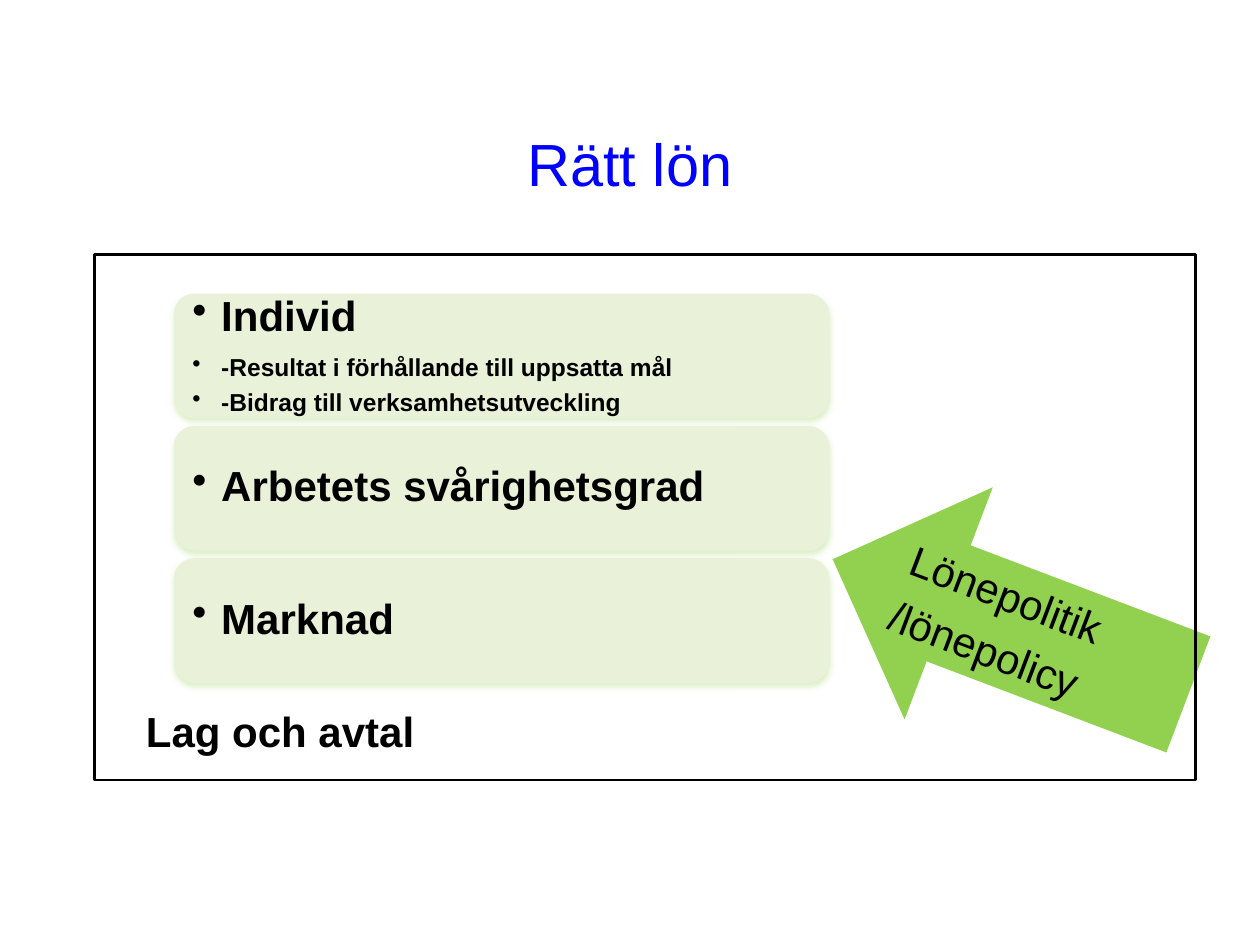
from dataclasses import dataclass

from lxml import etree
from pptx import Presentation
from pptx.dml.color import RGBColor
from pptx.enum.shapes import MSO_SHAPE
from pptx.enum.text import MSO_ANCHOR, MSO_AUTO_SIZE, PP_ALIGN
from pptx.oxml import parse_xml
from pptx.oxml.ns import nsdecls, qn
from pptx.util import Inches, Pt

ROUNDED, RECTANGLE, LEFT_ARROW = (
    MSO_SHAPE.ROUNDED_RECTANGLE, MSO_SHAPE.RECTANGLE, MSO_SHAPE.LEFT_ARROW)
MIDDLE, LEFT, CENTER = MSO_ANCHOR.MIDDLE, PP_ALIGN.LEFT, PP_ALIGN.CENTER
FIT_SHAPE, NO_FIT = MSO_AUTO_SIZE.SHAPE_TO_FIT_TEXT, MSO_AUTO_SIZE.NONE
TITLE_ONLY = 5


@dataclass(frozen=True)
class Theme:
    font: str = "Arial"
    title_size: int = 34
    heading_size: int = 24
    detail_size: int = 14
    title: str = "0000FF"
    text: str = "000000"
    card: str = "E9F1D8"
    glow: str = "9ED561"
    arrow: str = "92D050"
    grid: float = 0.25  # inches per column and row
    indent: float = 0.23


class SlideBuilder:
    def __init__(self, slide, theme):
        self.slide = slide
        self.theme = theme

    def place(self, *cells):
        return [Inches(cell * self.theme.grid) for cell in cells]

    def style(self, paragraph, size, color, bold=False, align=LEFT):
        paragraph.alignment = align
        font = paragraph.font
        font.name, font.size, font.bold = self.theme.font, Pt(size), bold
        font.color.rgb = RGBColor.from_string(color)

    def fill_lines(self, frame, lines):
        """Set one paragraph per line and return the paragraphs."""
        frame.text = "\n".join(lines)
        return frame.paragraphs

    def title(self, text, *cells):
        shape = self.slide.shapes.title
        shape.left, shape.top, shape.width, shape.height = self.place(*cells)
        frame = shape.text_frame
        frame.text, frame.vertical_anchor = text, MIDDLE
        frame.auto_size = NO_FIT
        self.style(frame.paragraphs[0], self.theme.title_size,
                   self.theme.title, align=CENTER)

    def shape(self, kind, *cells, fill=None, line=None):
        shape = self.slide.shapes.add_shape(kind, *self.place(*cells))
        shape.shadow.inherit = False
        if fill:
            shape.fill.solid()
            shape.fill.fore_color.rgb = RGBColor.from_string(fill)
        else:
            shape.fill.background()
        if line:
            shape.line.color.rgb = RGBColor.from_string(line)
            shape.line.width = Pt(1.5)
        else:
            shape.line.fill.background()
        return shape

    def add_shadow(self, shape):
        effects = shape._element.spPr.find(qn("a:effectLst"))
        effects.append(parse_xml(
            f'<a:outerShdw {nsdecls("a")} blurRad="{Pt(3.1)}" dist="{Pt(1.8)}" '
            f'dir="5400000" rotWithShape="0"><a:srgbClr val="{self.theme.glow}">'
            '<a:alpha val="35000"/></a:srgbClr></a:outerShdw>'))

    def add_bullet(self, paragraph):
        properties = paragraph._p.get_or_add_pPr()
        indent = Inches(self.theme.indent)
        properties.set("marL", str(indent))
        properties.set("indent", str(-indent))
        etree.SubElement(properties, qn("a:buChar")).set("char", "•")

    def card(self, lines, *cells):
        theme = self.theme
        shape = self.shape(ROUNDED, *cells, fill=theme.card)
        self.add_shadow(shape)
        frame = shape.text_frame
        frame.word_wrap, frame.vertical_anchor = True, MIDDLE
        frame.margin_left = frame.margin_right = Inches(0.1)
        frame.margin_top = frame.margin_bottom = Inches(0.1)
        for index, paragraph in enumerate(self.fill_lines(frame, lines)):
            size = theme.detail_size if index else theme.heading_size
            self.add_bullet(paragraph)
            paragraph.line_spacing = 0.9
            paragraph.space_after = Pt(size * 0.35)
            self.style(paragraph, size, theme.text, bold=True)

    def arrow(self, lines, *cells, rotation):
        theme = self.theme
        shape = self.shape(LEFT_ARROW, *cells, fill=theme.arrow)
        shape.rotation = rotation
        frame = shape.text_frame
        frame.word_wrap, frame.vertical_anchor = True, MIDDLE
        for index, paragraph in enumerate(self.fill_lines(frame, lines)):
            if index:
                paragraph.space_before = Pt(theme.heading_size * 0.2)
            self.style(paragraph, theme.heading_size, theme.text)

    def label(self, text, *cells):
        frame = self.slide.shapes.add_textbox(*self.place(*cells)).text_frame
        frame.text, frame.word_wrap = text, False
        frame.auto_size = FIT_SHAPE
        self.style(frame.paragraphs[0], self.theme.heading_size,
                   self.theme.text, bold=True)


def main():
    presentation = Presentation()
    presentation.slide_width, presentation.slide_height = Inches(10), Inches(7.5)
    slide = presentation.slides.add_slide(presentation.slide_layouts[TITLE_ONLY])
    theme = Theme()
    builder = SlideBuilder(slide, theme)

    builder.title("Rätt lön", 3, 2.68, 34, 5)

    # Salary factors, stacked at an equal pitch
    factors = [
        ["Individ", "-Resultat i förhållande till uppsatta mål",
         "-Bidrag till verksamhetsutveckling"],
        ["Arbetets svårighetsgrad"],
        ["Marknad"],
    ]
    for row, lines in enumerate(factors):
        builder.card(lines, 5.52, 9.32 + row * 4.2, 20.8, 3.96)

    # Policy arrow, crossed by the frame of law and agreements
    builder.arrow(["Lönepolitik", "/lönepolicy"],
                  26.04, 15.96, 12.08, 7.88, rotation=20.8)
    builder.shape(RECTANGLE, 3, 8.08, 34.96, 16.68, line=theme.text)
    builder.label("Lag och avtal", 4.24, 22.2, 9.4, 2)

    presentation.save("out.pptx")


if __name__ == "__main__":
    main()
